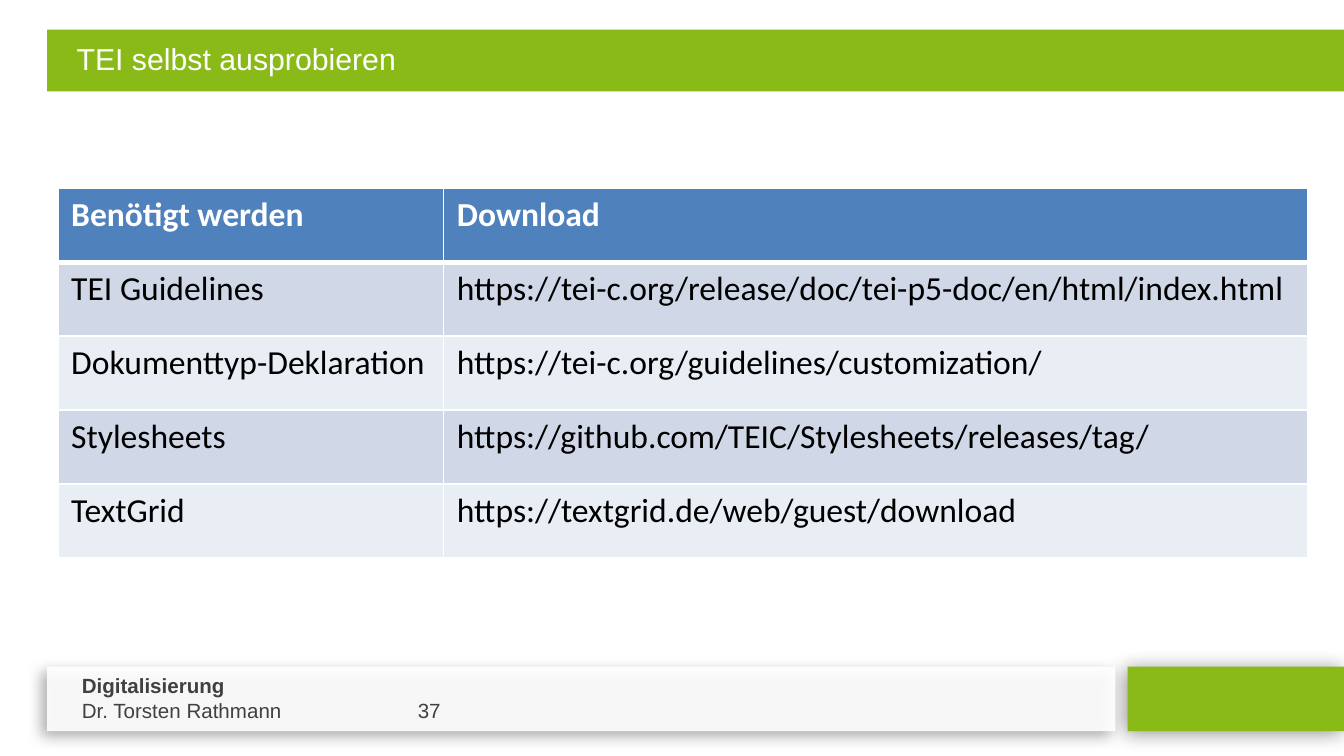
from lxml.etree import SubElement
from pptx import Presentation
from pptx.dml.color import RGBColor
from pptx.enum.shapes import MSO_SHAPE
from pptx.enum.text import MSO_ANCHOR, MSO_AUTO_SIZE, PP_ALIGN
from pptx.oxml.ns import qn
from pptx.util import Inches, Pt

COLORS = {
    "green": "89BA17",
    "white": "FFFFFF",
    "black": "000000",
    "footer text": "404040",
    "header": "4F81BD",
    "odd row": "D0D8E8",
    "even row": "E9EDF4",
}
DOWNLOADS = [
    ("Benötigt werden", "Download"),
    ("TEI Guidelines", "https://tei-c.org/release/doc/tei-p5-doc/en/html/index.html"),
    ("Dokumenttyp-Deklaration", "https://tei-c.org/guidelines/customization/"),
    ("Stylesheets", "https://github.com/TEIC/Stylesheets/releases/tag/"),
    ("TextGrid", "https://textgrid.de/web/guest/download"),
]


def color(name):
    return RGBColor.from_string(COLORS[name])


class SlideBuilder:
    """Holds the fonts and the slide being built."""

    heading_font = "Arial"
    table_font = "Calibri"

    def __init__(self, slide):
        self.slide = slide

    def add_run(self, paragraph, text, font, size, color_name, bold=False):
        run = paragraph.add_run()
        run.text = text
        run.font.name = font
        run.font.size = Pt(size)
        run.font.bold = bold
        run.font.color.rgb = color(color_name)

    def add_bar(self, left, top, width, height, fill, opacity=100, shadow=None):
        """Draw a rectangle; shadow is (opacity, blur, distance, angle)."""
        bar = self.slide.shapes.add_shape(
            MSO_SHAPE.RECTANGLE, Inches(left), Inches(top), Inches(width), Inches(height))
        bar.fill.solid()
        bar.fill.fore_color.rgb = color(fill)
        bar.line.fill.background()
        bar.shadow.inherit = False
        properties = bar._element.spPr
        if opacity < 100:
            fill_color = properties.find(qn("a:solidFill")).find(qn("a:srgbClr"))
            SubElement(fill_color, qn("a:alpha"), val=str(opacity * 1000))
        if shadow:
            shadow_opacity, blur, distance, angle = shadow
            outer = SubElement(
                properties.find(qn("a:effectLst")), qn("a:outerShdw"),
                blurRad=str(Pt(blur)), dist=str(Pt(distance)),
                dir=str(angle * 60000), rotWithShape="0")
            shadow_color = SubElement(outer, qn("a:srgbClr"), val=COLORS["black"])
            SubElement(shadow_color, qn("a:alpha"), val=str(shadow_opacity * 1000))

    def add_title(self, text, left, top, width, height):
        title = self.slide.shapes.title
        title.left, title.top = Inches(left), Inches(top)
        title.width, title.height = Inches(width), Inches(height)
        # Bring the title in front of its bar
        self.slide.shapes._spTree.append(title._element)
        frame = title.text_frame
        frame.auto_size = MSO_AUTO_SIZE.NONE
        frame.vertical_anchor = MSO_ANCHOR.TOP
        frame.margin_top = Inches(0.08)
        paragraph = frame.paragraphs[0]
        paragraph.alignment = PP_ALIGN.LEFT
        paragraph._p.get_or_add_pPr().set("marL", str(Inches(0.12)))
        self.add_run(paragraph, text, self.heading_font, 16.2, "white")

    def add_footer(self, course, author, number, left, top, width, height):
        box = self.slide.shapes.add_textbox(
            Inches(left), Inches(top), Inches(width), Inches(height))
        frame = box.text_frame
        frame.word_wrap = True
        self.add_run(frame.paragraphs[0], course, self.heading_font, 11,
                     "footer text", bold=True)
        paragraph = frame.add_paragraph()
        tabs = SubElement(paragraph._p.get_or_add_pPr(), qn("a:tabLst"))
        SubElement(tabs, qn("a:tab"), pos=str(Inches(2.5)), algn="l")
        self.add_run(paragraph, f"{author}\t{number}", self.heading_font, 11, "footer text")

    def add_header_borders(self, cell):
        """Give a header cell white borders; call before setting its fill."""
        properties = cell._tc.get_or_add_tcPr()
        for side, width in (("L", 1), ("R", 1), ("T", 1), ("B", 3)):
            line = SubElement(properties, qn(f"a:ln{side}"), w=str(Pt(width)))
            line_fill = SubElement(line, qn("a:solidFill"))
            SubElement(line_fill, qn("a:srgbClr"), val=COLORS["white"])

    def add_table(self, rows, left, top, column_widths, row_height):
        table = self.slide.shapes.add_table(
            len(rows), len(column_widths), Inches(left), Inches(top),
            Inches(sum(column_widths)), Inches(row_height * len(rows))).table
        for column, width in zip(table.columns, column_widths):
            column.width = Inches(width)
        for row_index, texts in enumerate(rows):
            is_header = row_index == 0
            fill = "header" if is_header else "odd row" if row_index % 2 else "even row"
            for column_index, text in enumerate(texts):
                cell = table.cell(row_index, column_index)
                if is_header:
                    self.add_header_borders(cell)
                cell.fill.solid()
                cell.fill.fore_color.rgb = color(fill)
                self.add_run(cell.text_frame.paragraphs[0], text, self.table_font, 18,
                             "white" if is_header else "black", bold=is_header)


def main():
    presentation = Presentation()
    presentation.slide_width = Inches(10)
    presentation.slide_height = Inches(10 * 9 / 16)
    slide = presentation.slides.add_slide(presentation.slide_layouts[5])
    builder = SlideBuilder(slide)

    builder.add_bar(8.39, 4.96, 1.61, 0.48, "green", shadow=(42, 10.8, 2, 142))
    builder.add_bar(0.35, 4.96, 7.95, 0.48, "white", opacity=91, shadow=(34, 7.5, 4, 145))
    builder.add_footer("Digitalisierung", "Dr. Torsten Rathmann", 37, 0.51, 4.96, 5.98, 0.47)
    builder.add_bar(0.35, 0.22, 9.69, 0.46, "green")
    builder.add_title("TEI selbst ausprobieren", 0.35, 0.22, 9.69, 0.35)
    builder.add_table(DOWNLOADS, 0.43, 1.4, (2.87, 6.43), 0.55)

    presentation.save("out.pptx")


if __name__ == "__main__":
    main()
